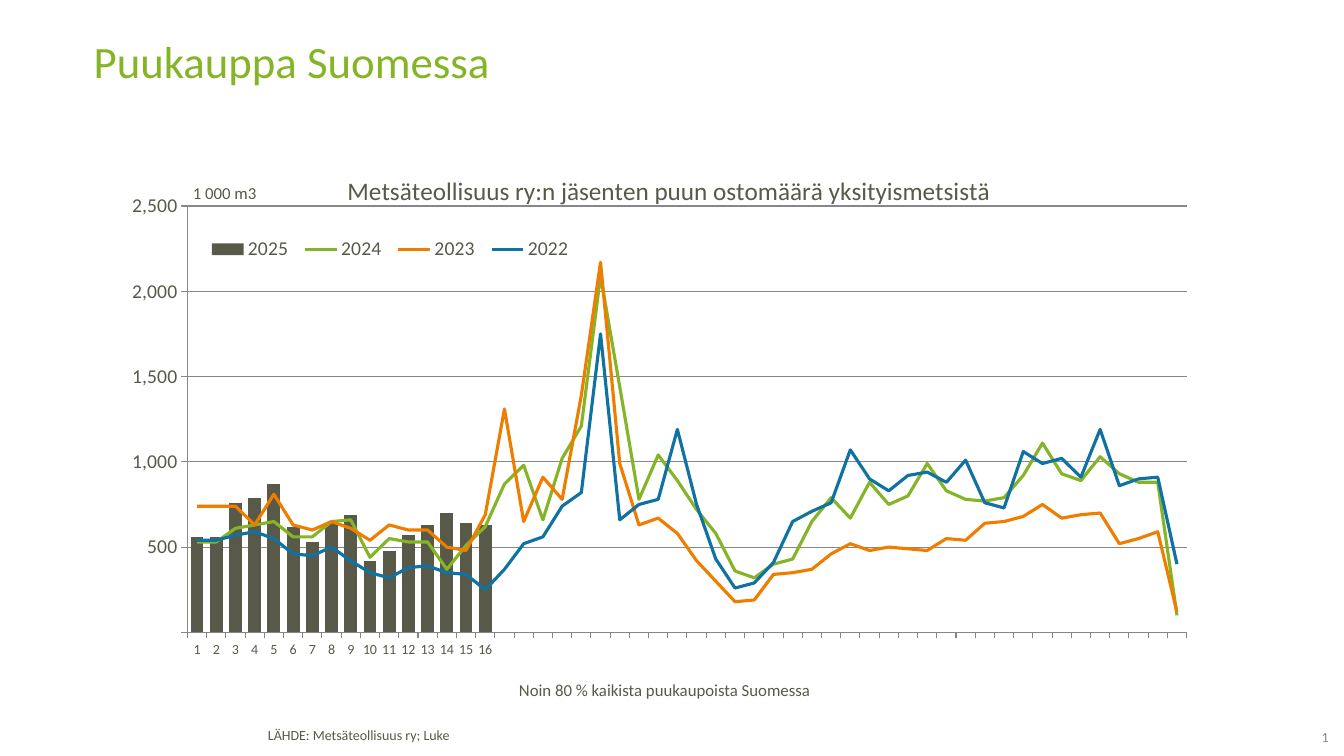
from lxml import etree
from pptx import Presentation
from pptx import util as u
from pptx.chart import data as cd
from pptx.dml import color as co
from pptx.enum import chart as ce, text as te
from pptx.oxml import ns

HUES = {"text": "59594A", "green": "85B526", "orange": "EF7D00",
        "blue": "0F72A2", "grey": "878787"}
SALES = {
    "2025": ("text", [560, 560, 760, 790, 870, 620, 530, 640, 690, 420, 480, 570, 630,
                      700, 640, 630]),
    "2024": ("green", [530, 530, 610, 630, 650, 560, 560, 650, 660, 440, 550, 530, 530,
                       370, 510, 620, 870, 980, 660, 1020, 1210, 2090, 1440, 780, 1040,
                       890, 720, 580, 360, 320, 400, 430, 650, 790, 670, 880, 750, 800,
                       990, 830, 780, 770, 790, 920, 1110, 930, 890, 1030, 930, 880,
                       880, 100]),
    "2023": ("orange", [740, 740, 740, 630, 810, 630, 600, 650, 610, 540, 630, 600, 600,
                        500, 480, 690, 1310, 650, 910, 780, 1390, 2170, 990, 630, 670,
                        580, 420, 300, 180, 190, 340, 350, 370, 460, 520, 480, 500, 490,
                        480, 550, 540, 640, 650, 680, 750, 670, 690, 700, 520, 550, 590,
                        120]),
    "2022": ("blue", [540, 540, 570, 590, 550, 460, 450, 500, 420, 350, 320, 380, 390,
                      350, 340, 250, 370, 520, 560, 740, 820, 1750, 660, 750, 780, 1190,
                      750, 430, 260, 290, 410, 650, 710, 760, 1070, 900, 830, 920, 940,
                      880, 1010, 760, 730, 1060, 990, 1020, 910, 1190, 860, 900, 910,
                      400]),
}
WEEKS = 52


class Deck:
    """Holds the style and the current slide."""

    face = "Calibri"

    def __init__(self):
        self.prs = Presentation()
        self.prs.slide_width, self.prs.slide_height = u.Pt(960), u.Pt(540)
        self.slide = self.prs.slides.add_slide(self.prs.slide_layouts[6])

    def hue(self, name):
        return co.RGBColor.from_string(HUES[name])

    def style(self, font, size, hue="text"):
        font.name, font.size, font.bold = self.face, u.Pt(size), False
        font.color.rgb = self.hue(hue)

    def stroke(self, form, hue, width):
        form.line.color.rgb = self.hue(hue)
        form.line.width = u.Pt(width)

    def text(self, words, area, size, hue="text", pitch=1.0, pads=(7.2, 3.6, 7.2, 3.6),
             align=te.PP_ALIGN.LEFT, anchor=te.MSO_ANCHOR.TOP):
        frame = self.slide.shapes.add_textbox(*map(u.Pt, area)).text_frame
        frame.word_wrap, frame.vertical_anchor = True, anchor
        (frame.margin_left, frame.margin_top,
         frame.margin_right, frame.margin_bottom) = map(u.Pt, pads)
        frame.text = words
        para = frame.paragraphs[0]
        para.alignment, para.line_spacing = align, pitch
        self.style(para.runs[0].font, size, hue)

    def place(self, node, index, inner=False, **spots):
        for old in node.findall(ns.qn("c:layout")):
            node.remove(old)
        layout = etree.Element(ns.qn("c:layout"))
        node.insert(index, layout)
        manual = etree.SubElement(layout, ns.qn("c:manualLayout"))
        if inner:
            etree.SubElement(manual, ns.qn("c:layoutTarget"), val="inner")
        for key in ("x", "y"):
            etree.SubElement(manual, ns.qn(f"c:{key}Mode"), val="edge")
        for key, value in spots.items():
            etree.SubElement(manual, ns.qn(f"c:{key}"), val=str(value))

    def split(self, root):
        bars = root.find(".//" + ns.qn("c:barChart"))
        lines = etree.Element(ns.qn("c:lineChart"))
        bars.addnext(lines)
        etree.SubElement(lines, ns.qn("c:grouping"), val="standard")
        etree.SubElement(lines, ns.qn("c:varyColors"), val="0")
        first, *rest = bars.findall(ns.qn("c:ser"))
        for ser in rest:
            for flag in ser.findall(ns.qn("c:invertIfNegative")):
                ser.remove(flag)
            lines.append(ser)
        etree.SubElement(lines, ns.qn("c:marker"), val="1")
        for axis in bars.findall(ns.qn("c:axId")):
            etree.SubElement(lines, ns.qn("c:axId"), val=axis.get("val"))
        cats = first.find(ns.qn("c:cat"))
        for point in list(cats.iter(ns.qn("c:pt"))):
            if int(point.get("idx")) >= len(SALES["2025"][1]):
                point.getparent().remove(point)

    def title(self, owner, words, size):
        frame = owner.text_frame
        frame.text = words
        self.style(frame.paragraphs[0].runs[0].font, size)

    def chart(self, area):
        data = cd.CategoryChartData(number_format="#,###,")
        data.categories = [str(week) for week in range(1, WEEKS + 1)]
        for year, (_, sums) in SALES.items():
            gaps = [None] * (WEEKS - len(sums))
            data.add_series(year, [1000 * num for num in sums] + gaps)
        chart = self.slide.shapes.add_chart(
            ce.XL_CHART_TYPE.COLUMN_CLUSTERED, *map(u.Pt, area), data).chart
        self.style(chart.font, 10)
        root = chart._chartSpace
        self.split(root)
        bars, lines = chart.plots
        bars.gap_width, bars.vary_by_categories = 50, False
        fill = bars.series[0].format.fill
        fill.solid()
        fill.fore_color.rgb = self.hue("text")
        for ser in lines.series:
            self.stroke(ser.format, SALES[ser.name][0], 2.25)
            ser.smooth = False
            ser.marker.style = ce.XL_MARKER_STYLE.NONE
        self.axes(chart)
        chart.has_title = True
        self.title(chart.chart_title,
                   "Metsäteollisuus ry:n jäsenten puun ostomäärä yksityismetsistä", 18)
        chart.chart_title.include_in_layout = True
        chart.has_legend = True
        chart.legend.position = ce.XL_LEGEND_POSITION.TOP
        chart.legend.include_in_layout = False
        self.style(chart.legend.font, 14)
        head = root.find(ns.qn("c:chart"))
        plot = head.find(ns.qn("c:plotArea"))
        unit = plot.find(ns.qn("c:valAx")).find(ns.qn("c:title"))
        body = unit.find(".//" + ns.qn("a:bodyPr"))
        body.set("rot", "0")
        body.set("vert", "horz")
        self.place(head.find(ns.qn("c:title")), 1, x=0.22, y=0.02)
        self.place(unit, 1, x=0.09, y=0.04)
        self.place(head.find(ns.qn("c:legend")), 1, x=0.1, y=0.14, w=0.32, h=0.07)
        self.place(plot, 0, inner=True, x=0.088, y=0.092, w=0.848, h=0.82)

    def axes(self, chart):
        weeks, sums = chart.category_axis, chart.value_axis
        for axis, size in ((weeks, 10), (sums, 14)):
            axis.major_tick_mark = ce.XL_TICK_MARK.OUTSIDE
            axis.minor_tick_mark = ce.XL_TICK_MARK.NONE
            self.stroke(axis.format, "grey", 0.75)
            self.style(axis.tick_labels.font, size)
        sums.minimum_scale, sums.maximum_scale = 0, 2500000
        sums.major_unit = 500000
        sums.has_major_gridlines = True
        self.stroke(sums.major_gridlines.format, "grey", 0.75)
        sums.tick_labels.number_format = "#,###,"
        sums.tick_labels.number_format_is_linked = False
        sums.has_title = True
        self.title(sums.axis_title, "1 000 m3", 12)


def main():
    deck = Deck()
    deck.text("LÄHDE: Metsäteollisuus ry; Luke", (184.3, 517, 517, 19.4), 10, pitch=0.85)
    deck.text("1", (910.8, 521.3, 38.2, 13.7), 10, "grey", pads=(0, 0, 0, 2.9),
              align=te.PP_ALIGN.RIGHT, anchor=te.MSO_ANCHOR.MIDDLE)
    deck.text("Puukauppa Suomessa", (59.8, 28, 841.7, 70.6), 32, "green", 0.8)
    deck.chart((59.8, 113, 841.7, 371.5))
    deck.text("Noin 80 % kaikista puukaupoista Suomessa", (363.6, 481.7, 236.2, 22.3), 12)
    deck.prs.save("out.pptx")


if __name__ == "__main__":
    main()
